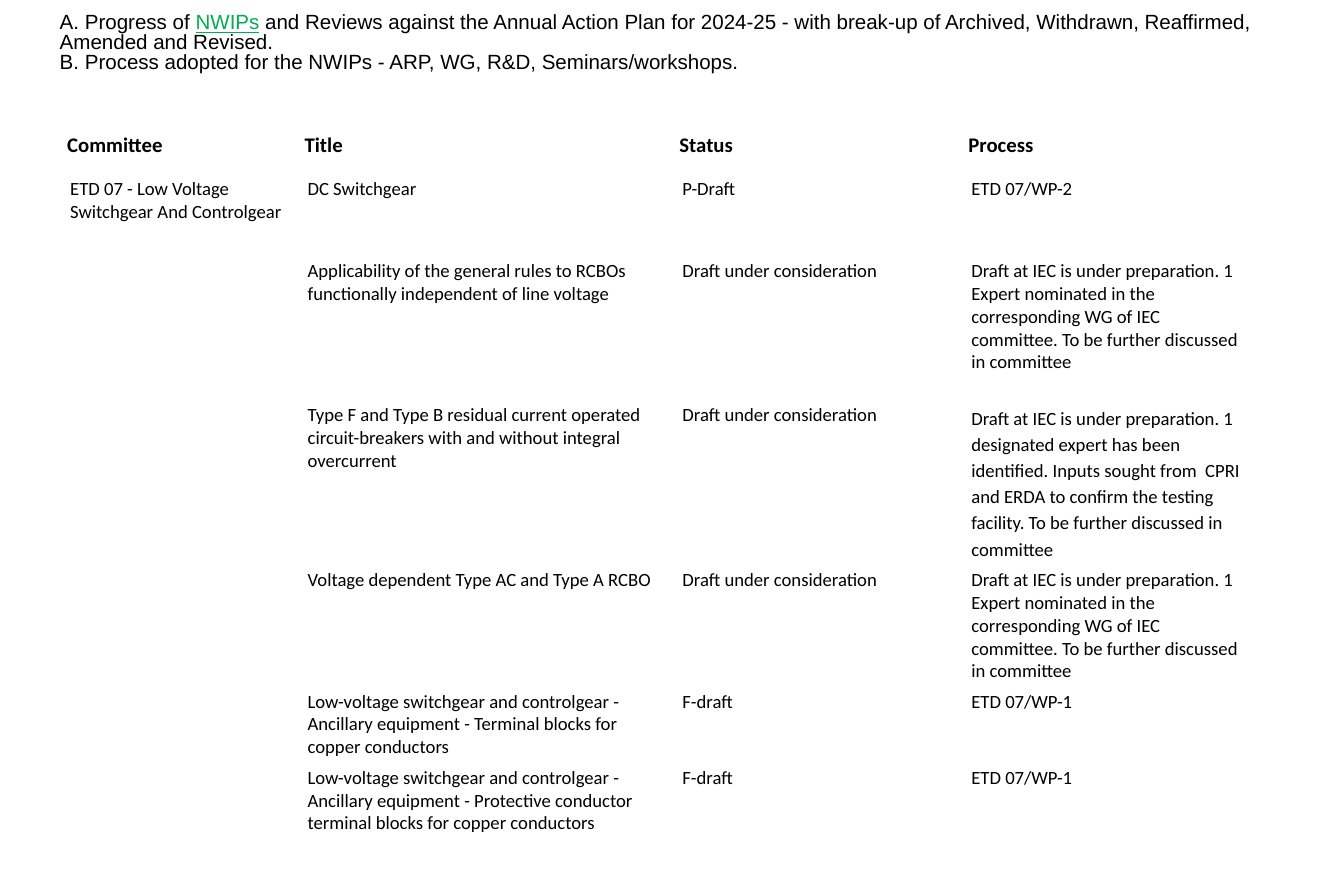
from pptx import Presentation
from pptx.dml.color import RGBColor
from pptx.enum.text import MSO_ANCHOR, MSO_AUTO_SIZE, PP_ALIGN
from pptx.util import Inches, Pt


def rgb(color):
    return RGBColor.from_string(color)


def add_run(p, text, size, font, color="000000", bold=False, underline=False):
    r = p.add_run()
    r.text = text
    r.font.size = Pt(size)
    r.font.name = font
    r.font.bold = bold
    r.font.underline = underline
    r.font.color.rgb = rgb(color)


prs = Presentation()
prs.slide_width = Inches(18)
prs.slide_height = Inches(12)
s = prs.slides.add_slide(prs.slide_layouts[5])

title = s.shapes.title
title.left, title.top = Inches(0.61), Inches(0)
title.width, title.height = Inches(16.52), Inches(1.25)
tf = title.text_frame
tf.word_wrap = True
tf.auto_size = MSO_AUTO_SIZE.NONE
tf.vertical_anchor = MSO_ANCHOR.TOP
tf.margin_left = tf.margin_right = tf.margin_top = tf.margin_bottom = Inches(0.19)
p = tf.paragraphs[0]
p.alignment = PP_ALIGN.LEFT
p.line_spacing = 0.8
add_run(p, "A. Progress of ", 19.8, "Arial")
add_run(p, "NWIPs", 19.8, "Arial", "00B050", underline=True)
add_run(p, " and Reviews against the Annual Action Plan for 2024-25 - with break-up of "
        "Archived, Withdrawn, Reaffirmed, Amended and Revised. ", 19.8, "Arial")
p.add_line_break()
add_run(p, "B. Process adopted for the NWIPs - ARP, WG, R&D, Seminars/workshops.", 19.8, "Arial")

pending = "Draft under consideration"
nominated = ("Draft at IEC is under preparation. 1\nExpert nominated in the corresponding WG "
             "of IEC committee. To be further discussed in committee")
designated = ("Draft at IEC is under preparation. 1 designated expert has been identified. "
              "Inputs sought from  CPRI and ERDA to confirm the testing facility. "
              "To be further discussed in committee")
terminals = "Low-voltage switchgear and controlgear - Ancillary equipment - "
rows = [
    ("Committee", "Title", "Status", "Process"),
    ("ETD 07 - Low Voltage Switchgear And Controlgear", "DC Switchgear", "P-Draft", "ETD 07/WP-2"),
    ("", "Applicability of the general rules to RCBOs functionally independent of line voltage",
     pending, nominated),
    ("", "Type F and Type B residual current operated circuit-breakers with and without "
     "integral overcurrent", pending, designated),
    ("", "Voltage dependent Type AC and Type A RCBO", pending, nominated),
    ("", terminals + "Terminal blocks for copper conductors", "F-draft", "ETD 07/WP-1"),
    ("", terminals + "Protective conductor terminal blocks for copper conductors",
     "F-draft", "ETD 07/WP-1"),
]
widths = [3.18, 5.02, 3.87, 3.87]
heights = [0.81, 1.1, 1.93, 2.21, 1.62, 1.02, 1.33]

frame = s.shapes.add_table(len(rows), len(widths), Inches(0.84), Inches(1.52),
                           Inches(sum(widths)), Inches(sum(heights)))
table = frame.table
table.horz_banding = False
for column, width in zip(table.columns, widths):
    column.width = Inches(width)
for row, height in zip(table.rows, heights):
    row.height = Inches(height)
table.cell(1, 0).merge(table.cell(6, 0))

for i, texts in enumerate(rows):
    header = i == 0
    for j, text in enumerate(texts):
        cell = table.cell(i, j)
        cell.fill.solid()
        cell.fill.fore_color.rgb = rgb("FFFFFF")
        if header:
            cell.vertical_anchor = MSO_ANCHOR.BOTTOM
            cell.margin_left = cell.margin_right = Inches(0.06)
            cell.margin_top = cell.margin_bottom = Inches(0.21)
        if not text:
            continue
        tf = cell.text_frame
        for k, line in enumerate(text.split("\n")):
            p = tf.add_paragraph() if k else tf.paragraphs[0]
            if header or text == designated:
                p.line_spacing = 1.15
            add_run(p, line, 20 if header else 18, "Calibri", bold=header)

prs.save("out.pptx")
